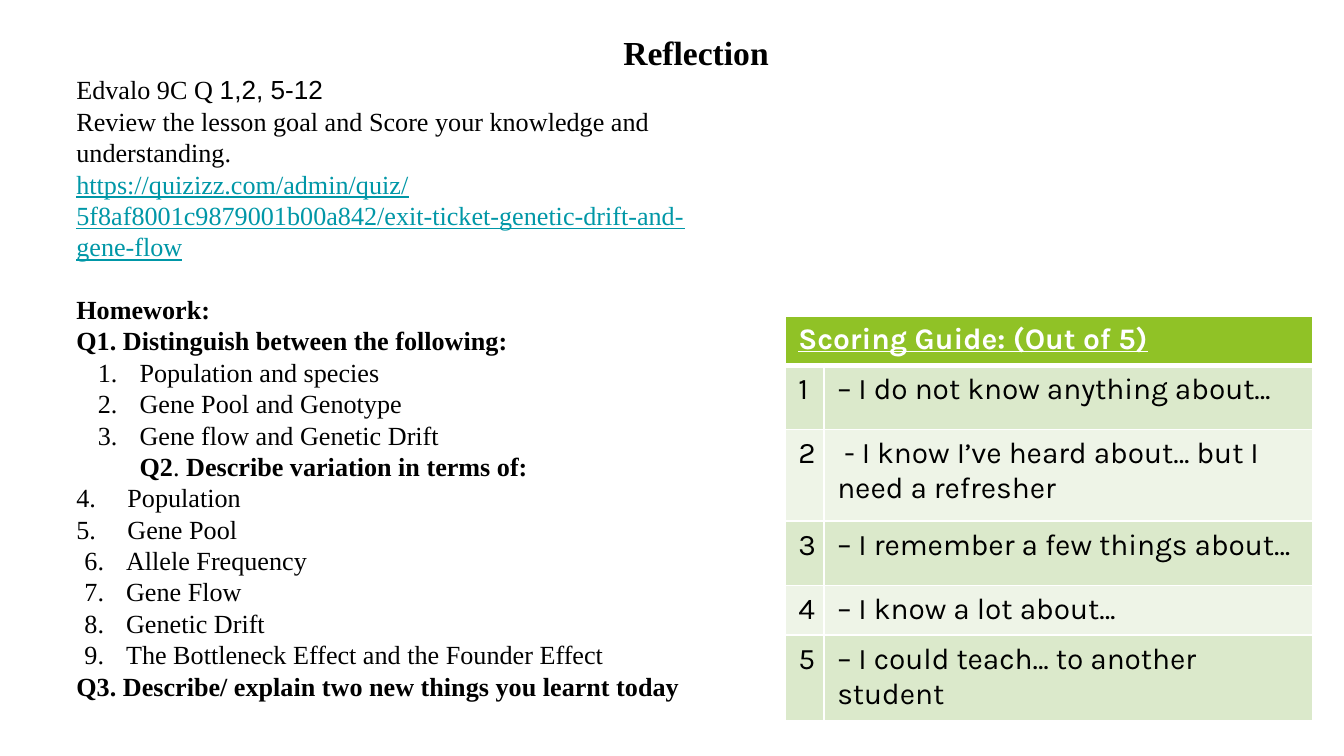
from pptx import Presentation
from pptx.dml.color import RGBColor
from pptx.enum import text as t
from pptx.oxml import parse_xml
from pptx.oxml.ns import nsdecls
from pptx.util import Inches, Pt

SERIF = "Times New Roman"
LINK = "https://quizizz.com/admin/quiz/5f8af8001c9879001b00a842/exit-ticket-genetic-drift-and-gene-flow"
INDENTS = {"inner": (0.47, -0.31), "flush": (0.38, -0.38), "outer": (0.37, -0.31)}
NOTES = [
    ("", [("Edvalo 9C Q ", ""), ("1,2, 5-12", "sans")]),
    ("", [("Review the lesson goal and Score your knowledge and understanding.", "")]),
    ("", [(LINK, "link")]),
    ("gap", [("Homework:", "bold")]),
    ("", [("Q1. Distinguish between the following:", "bold")]),
    ("inner", [("Population and species", "")]),
    ("inner", [("Gene Pool and Genotype", "")]),
    ("inner", [("Gene flow and Genetic Drift", ""), ("\n", ""), ("Q2", "bold"),
               (". ", ""), ("Describe variation in terms of:", "bold")]),
    ("flush", [("Population", "")]),
    ("flush", [("Gene Pool", "")]),
    ("outer", [("Allele Frequency", "")]),
    ("outer", [("Gene Flow", "")]),
    ("outer", [("Genetic Drift", "")]),
    ("outer", [("The Bottleneck Effect and the Founder Effect", "")]),
    ("", [("Q3. Describe/ explain two new things you learnt today", "bold")]),
]
GUIDE = "Scoring Guide: (Out of 5)"
SCORES = [
    "– I do not know anything about…",
    "\u00a0- I know I’ve heard about… but I need a refresher",
    "– I remember a few things about…",
    "– I know a lot about…",
    "– I could teach… to another student",
]
COLS = [0.29, 3.64]
ROWS = [0.36, 0.48, 0.68, 0.48, 0.37, 0.63]


def color(code):
    return RGBColor.from_string(code)


def style(font, size, name, code="000000", bold=False):
    font.size = Pt(size)
    font.name = name
    font.color.rgb = color(code)
    font.bold = bold


def add_box(slide, left, top, width, height):
    frame = slide.shapes.add_textbox(*map(Inches, (left, top, width, height))).text_frame
    frame.word_wrap = True
    return frame


def number(para, kind):
    left, hang = INDENTS[kind]
    para.level = 1
    props = para._p.get_or_add_pPr()
    props.set("marL", str(Inches(left)))
    props.set("indent", str(Inches(hang)))
    props.append(parse_xml(f'<a:buFont {nsdecls("a")} typeface="{SERIF}"/>'))
    props.append(parse_xml(f'<a:buAutoNum {nsdecls("a")} type="arabicPeriod"/>'))


def add_notes(slide):
    frame = add_box(slide, 0.47, 0.5, 5, 4.81)
    for i, (kind, runs) in enumerate(NOTES):
        para = frame.add_paragraph() if i else frame.paragraphs[0]
        para.line_spacing = Pt(16.8)
        if kind == "gap":
            para.space_before = Pt(16.8)
        if kind in INDENTS:
            number(para, kind)
        style(para.font, 14, SERIF)
        for words, look in runs:
            if words == "\n":
                para.add_line_break()
                continue
            run = para.add_run()
            run.text = words
            if look == "bold":
                run.font.bold = True
            elif look == "sans":
                run.font.name = "Arial"
            elif look == "link":
                run.font.color.rgb = color("0097A7")
                run.font.underline = True


def border(cell, row):
    props = cell._tc.get_or_add_tcPr()
    wide = {"T": 3 if row == 1 else 1, "B": 3 if row == 0 else 1}
    for i, side in enumerate("LRTB"):
        props.insert(i, parse_xml(
            f'<a:ln{side} {nsdecls("a")} w="{Pt(wide.get(side, 1))}"><a:solidFill>'
            f'<a:srgbClr val="FFFFFF"/></a:solidFill></a:ln{side}>'))


def add_guide(slide):
    size = map(Inches, (5.84, 2.35, sum(COLS), sum(ROWS)))
    table = slide.shapes.add_table(len(ROWS), len(COLS), *size).table
    for col, width in zip(table.columns, COLS):
        col.width = Inches(width)
    cells = [(GUIDE, "")] + [(str(i), words) for i, words in enumerate(SCORES, 1)]
    for r, pair in enumerate(cells):
        table.rows[r].height = Inches(ROWS[r])
        head = r == 0
        for c, words in enumerate(pair):
            cell = table.cell(r, c)
            cell.fill.solid()
            cell.fill.fore_color.rgb = color("90C226" if head else "DBE9CB" if r % 2 else "EEF4E7")
            border(cell, r)
            para = cell.text_frame.paragraphs[0]
            if words:
                para.add_run().text = words
            style(para.font, 16, "Karla", "FFFFFF" if head else "000000", head)
            para.font.underline = head
    table.cell(0, 0).merge(table.cell(0, 1))


def add_title(slide):
    para = add_box(slide, 2.68, 0.19, 5, 0.4).paragraphs[0]
    para.add_run().text = "Reflection"
    para.alignment = t.PP_ALIGN.CENTER
    para.line_spacing = Pt(21.6)
    style(para.font, 18, SERIF, bold=True)


def main():
    deck = Presentation()
    deck.slide_width, deck.slide_height = Inches(10), Pt(405)
    slide = deck.slides.add_slide(deck.slide_layouts[6])
    add_notes(slide)
    add_guide(slide)
    add_title(slide)
    deck.save("out.pptx")


if __name__ == "__main__":
    main()
